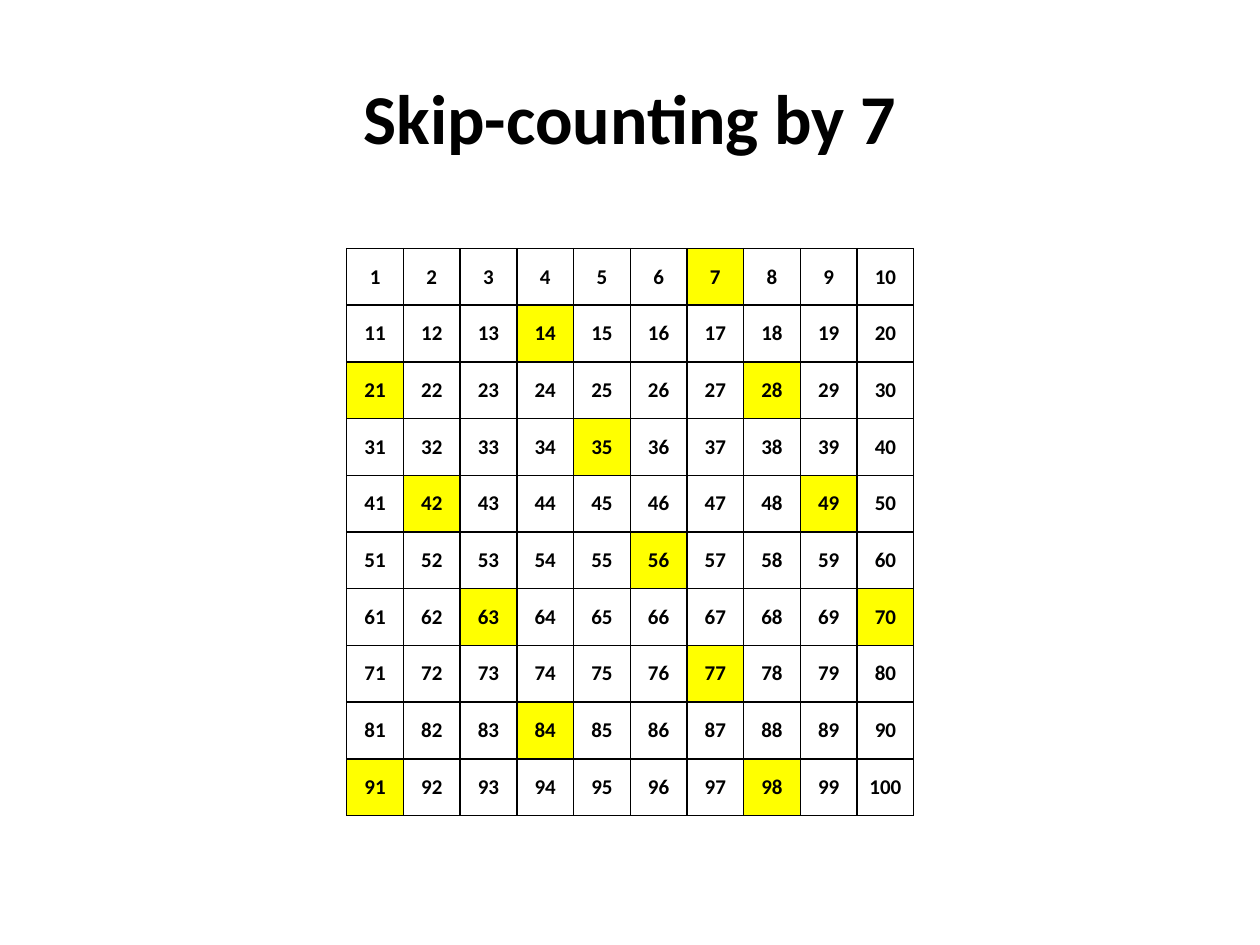
"""Build a hundred chart slide that highlights skip-counting by 7."""
from lxml.etree import SubElement
from pptx import Presentation
from pptx.dml.color import RGBColor
from pptx.enum.text import MSO_VERTICAL_ANCHOR as Anchor, PP_PARAGRAPH_ALIGNMENT as Align
from pptx.oxml.ns import qn
from pptx.util import Cm, Pt

COLORS = {"text": "000000", "border": "000000", "highlight": "FFFF00"}
FONT = "Calibri"
STEP = 7
GRID_SIZE = 10
CELL_SIZE = 1.143


def write_text(text_frame, text, size):
    paragraph = text_frame.paragraphs[0]
    paragraph.text = text
    paragraph.alignment = Align.CENTER
    font = paragraph.font
    font.name, font.size, font.bold = FONT, Pt(size), True
    font.color.rgb = RGBColor.from_string(COLORS["text"])


def add_title(slide, text):
    shape = slide.shapes.add_textbox(Cm(1.27), Cm(0.76), Cm(22.86), Cm(3.18))
    text_frame = shape.text_frame
    text_frame.word_wrap = True
    text_frame.vertical_anchor = Anchor.MIDDLE
    write_text(text_frame, text, 40)


def add_borders(cell):
    properties = cell._tc.get_or_add_tcPr()
    for side in ("a:lnL", "a:lnR", "a:lnT", "a:lnB"):
        line = SubElement(properties, qn(side), w=str(Pt(1)))
        fill = SubElement(line, qn("a:solidFill"))
        SubElement(fill, qn("a:srgbClr"), val=COLORS["border"])


def fill_cell(cell, number):
    cell.vertical_anchor = Anchor.MIDDLE
    cell.margin_left = cell.margin_right = Cm(0.18)
    cell.margin_top = cell.margin_bottom = Cm(0)
    write_text(cell.text_frame, str(number), 12)
    add_borders(cell)
    if number % STEP == 0:
        cell.fill.solid()
        cell.fill.fore_color.rgb = RGBColor.from_string(COLORS["highlight"])
    else:
        cell.fill.background()


def add_hundred_chart(slide):
    side = Cm(CELL_SIZE * GRID_SIZE)
    table = slide.shapes.add_table(
        GRID_SIZE, GRID_SIZE, Cm(6.99), Cm(5.01), side, side
    ).table
    table.first_row = table.horz_banding = False
    for band in table.columns:
        band.width = Cm(CELL_SIZE)
    for band in table.rows:
        band.height = Cm(CELL_SIZE)
    for number, cell in enumerate(table.iter_cells(), start=1):
        fill_cell(cell, number)


def main():
    presentation = Presentation()
    presentation.slide_width, presentation.slide_height = Cm(25.4), Cm(19.05)
    slide = presentation.slides.add_slide(presentation.slide_layouts[6])
    add_title(slide, f"Skip-counting by {STEP}")
    add_hundred_chart(slide)
    presentation.save("out.pptx")


if __name__ == "__main__":
    main()
